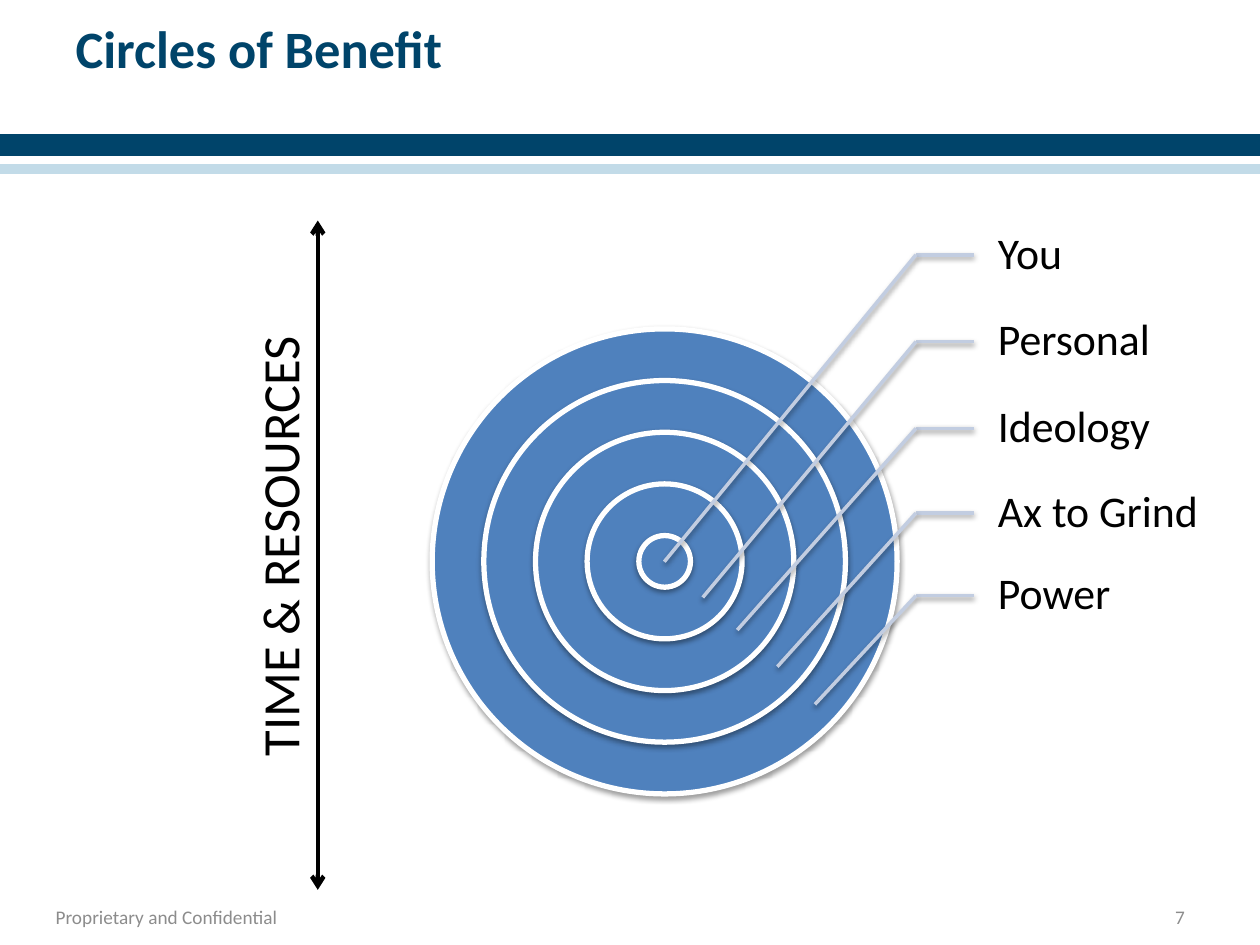
from lxml import etree
from pptx import Presentation
from pptx.dml.color import RGBColor
from pptx.enum import shapes, text
from pptx.oxml import parse_xml
from pptx.oxml.ns import nsdecls, qn
from pptx.util import Pt

COLORS = {"navy": "00446A", "white": "FFFFFF", "pale": "C2DBE8", "ring": "4F81BD",
          "leader": "C2CDE1", "black": "000000", "gray": "8C8C8C"}
FONT = "Calibri"

TITLE = "Circles of Benefit"
AXIS = "TIME & RESOURCES"
FOOTER, PAGE = "Proprietary and Confidential", "7"
BANDS = [("navy", 77.8, 18), ("white", 90, 3.6), ("pale", 95, 3.6)]  # color, top, height
# label, its middle height, and the point in its ring that the leader reaches
CIRCLES = [
    ("You", 145.6, (379.6, 321)),
    ("Personal", 195.2, (401.6, 341.4)),
    ("Ideology", 244.8, (421.3, 360)),
    ("Ax to Grind", 293.2, (444.2, 381)),
    ("Power", 340.4, (465.7, 402.5)),
]
CENTER_X, CENTER_Y, CORE = 379.8, 320.8, 29.52
ELBOW_X, LABEL_X, LABEL_W, LABEL_H = 523.4, 556.6, 132.5, 46.8
AXIS_X, AXIS_TOP, AXIS_MIDDLE, AXIS_BOTTOM = 181.6, 126, 312, 508.5


def rgb(name):
    return RGBColor.from_string(COLORS[name])


def add_shadow(shape):
    shape._element.spPr.append(parse_xml(
        f'<a:effectLst {nsdecls("a")}><a:outerShdw blurRad="{Pt(3.1)}" dist="{Pt(1.6)}" '
        'dir="5400000" rotWithShape="0"><a:srgbClr val="000000"><a:alpha val="38000"/>'
        '</a:srgbClr></a:outerShdw></a:effectLst>'))


def add_filled(slide, kind, box, fill, line, width):
    shape = slide.shapes.add_shape(kind, *map(Pt, box))
    shape.shadow.inherit = False
    shape.fill.solid()
    shape.fill.fore_color.rgb = rgb(fill)
    shape.line.color.rgb = rgb(line)
    shape.line.width = Pt(width)
    return shape


def add_line(slide, start, end, color, width):
    line = slide.shapes.add_connector(shapes.MSO_CONNECTOR.STRAIGHT,
                                      *map(Pt, (*start, *end)))
    line.line.color.rgb = rgb(color)
    line.line.width = Pt(width)
    return line


def write(shape, words, size, color, anchor=text.MSO_ANCHOR.MIDDLE,
          align=text.PP_ALIGN.LEFT, bold=False):
    frame = shape.text_frame
    frame.word_wrap = True
    frame.vertical_anchor = anchor
    frame.text = words
    paragraph = frame.paragraphs[0]
    paragraph.alignment = align
    font = paragraph.font
    font.name, font.size, font.bold = FONT, Pt(size), bold
    font.color.rgb = rgb(color)
    return paragraph


def add_text(slide, box, *args, **options):
    shape = slide.shapes.add_textbox(*map(Pt, box))
    return shape, write(shape, *args, **options)


def add_frame(slide):
    for color, top, height in BANDS:
        add_filled(slide, shapes.MSO_SHAPE.RECTANGLE, (0, top, 720, height), color, color, 2)
    title = slide.shapes.title
    title.left, title.top, title.width, title.height = map(Pt, (36, 5.8, 648, 90))
    write(title, TITLE, 30, "navy", anchor=text.MSO_ANCHOR.TOP, bold=True)
    footer, _ = add_text(slide, (23.8, 511.2, 185, 25.2), FOOTER, 11, "gray")
    footer.text_frame.margin_left = footer.text_frame.margin_right = Pt(8)
    add_text(slide, (516.2, 511.2, 168, 25.2), PAGE, 11, "gray", align=text.PP_ALIGN.RIGHT)


def add_rings(slide):
    for ring in reversed(range(len(CIRCLES))):
        size = CORE * (2 * ring + 1)
        add_shadow_to = add_filled(
            slide, shapes.MSO_SHAPE.OVAL,
            (CENTER_X - size / 2, CENTER_Y - size / 2, size, size), "ring", "white", 3)
        # the explicit shadow takes the place of the empty effect list
        properties = add_shadow_to._element.spPr
        properties.remove(properties.find(qn("a:effectLst")))
        add_shadow(add_shadow_to)


def add_labels(slide):
    for name, middle, target in CIRCLES:
        label, paragraph = add_text(
            slide, (LABEL_X, middle - LABEL_H / 2, LABEL_W, LABEL_H), name, 25, "black")
        frame = label.text_frame
        frame.margin_left = Pt(13.7)
        frame.margin_top = frame.margin_right = frame.margin_bottom = Pt(2.2)
        paragraph.line_spacing = 0.9
        elbow = (ELBOW_X, middle)
        stub = add_line(slide, elbow, (LABEL_X, middle), "leader", 2)
        stub.end_connect(label, 1)
        add_shadow(stub)
        add_shadow(add_line(slide, elbow, target, "leader", 2))


def add_axis(slide):
    for end in (AXIS_TOP, AXIS_BOTTOM):
        arrow = add_line(slide, (AXIS_X, AXIS_MIDDLE), (AXIS_X, end), "black", 2.5)
        etree.SubElement(arrow.line._get_or_add_ln(), qn("a:tailEnd"), type="arrow")
        etree.SubElement(arrow._element.spPr, qn("a:effectLst"))
    caption, _ = add_text(slide, (5, 290.2, 308.9, 43.9), AXIS, 30, "black",
                          anchor=text.MSO_ANCHOR.TOP, align=text.PP_ALIGN.CENTER)
    caption.rotation = 270


def main():
    deck = Presentation()
    deck.slide_width, deck.slide_height = Pt(720), Pt(540)
    slide = deck.slides.add_slide(deck.slide_layouts[5])
    add_frame(slide)
    add_rings(slide)
    add_labels(slide)
    add_axis(slide)
    deck.save("out.pptx")


if __name__ == "__main__":
    main()
